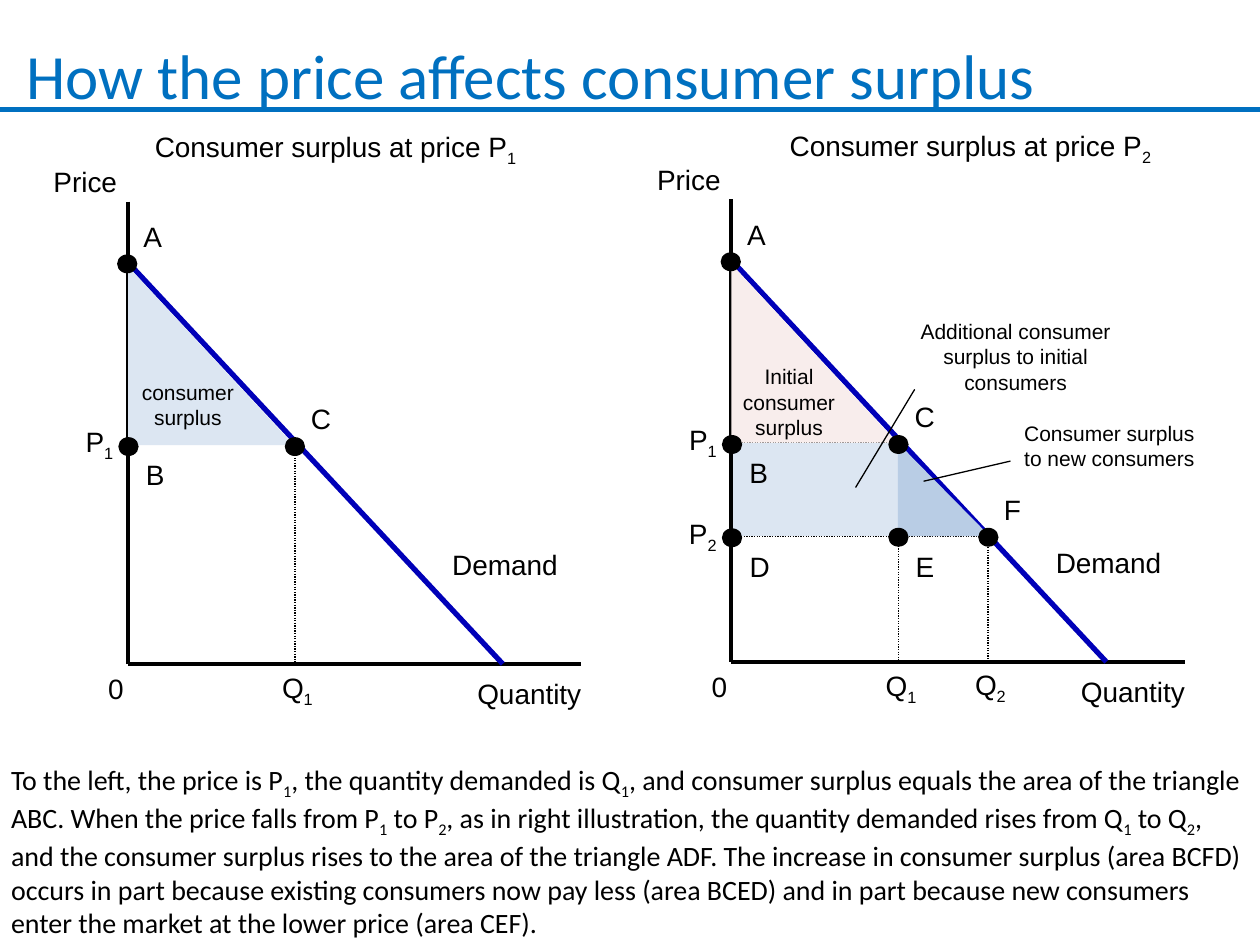
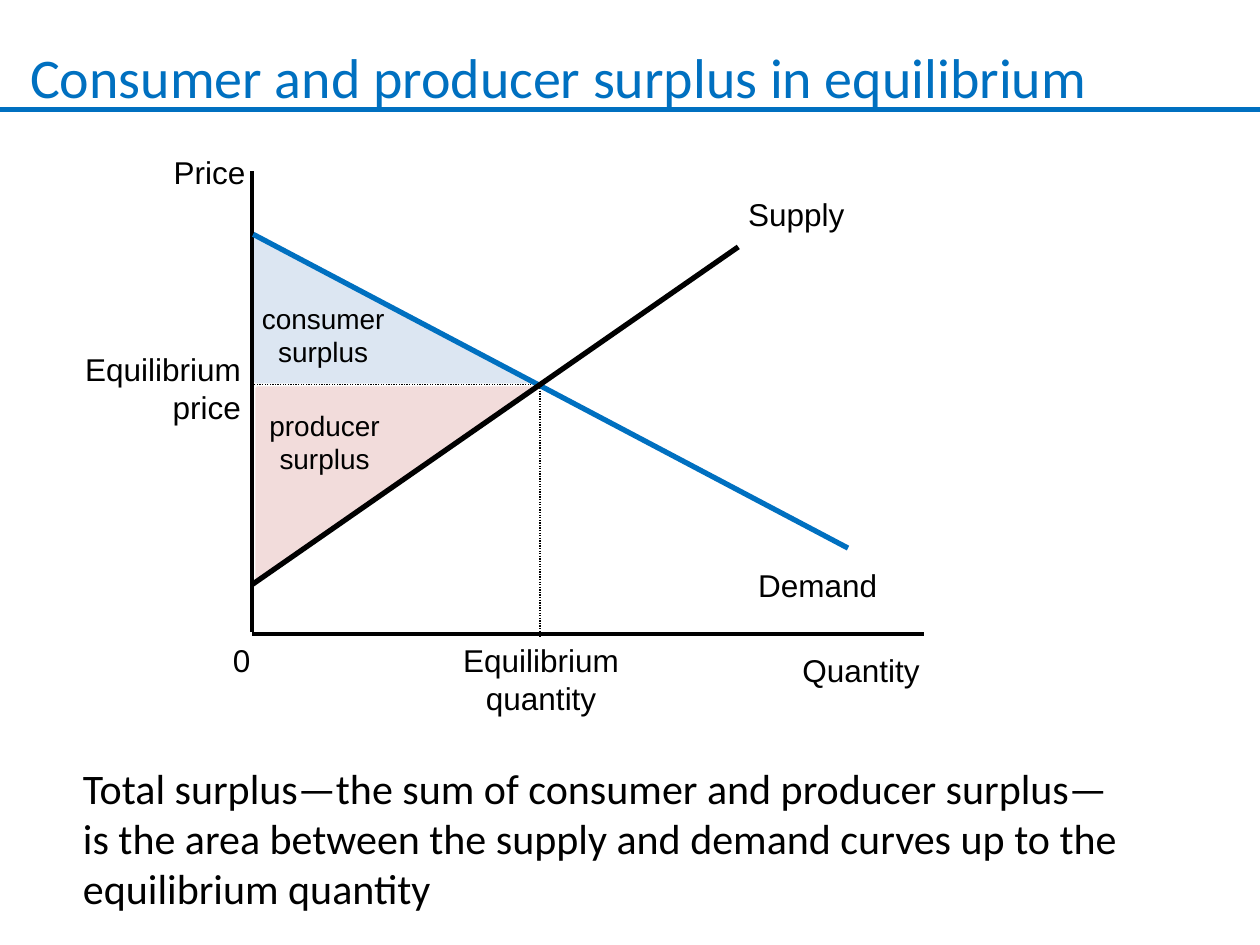
from lxml import etree
from pptx import Presentation
from pptx.dml.color import RGBColor
from pptx.enum import dml, shapes, text
from pptx.oxml.ns import qn
from pptx.util import Pt

HUES = {"blue": "0070C0", "navy": "0000B8", "black": "000000",
        "pale": "DCE6F2", "mid": "B9CDE5", "blush": "F8EDEC", "rose": "F2DCDB"}
# Line styles: colour, width, dotted
PENS = {"rule": ("blue", 3, False), "axis": ("black", 2.25, False),
        "navy": ("navy", 3, False), "blue": ("blue", 3, False),
        "black": ("black", 3, False), "dots": ("black", 0.75, True),
        "thin": ("black", 0.75, False)}
ALIGN = {"l": text.PP_ALIGN.LEFT, "c": text.PP_ALIGN.CENTER,
         "r": text.PP_ALIGN.RIGHT}
KINDS = {"tri": shapes.MSO_SHAPE.ISOSCELES_TRIANGLE,
         "rect": shapes.MSO_SHAPE.RECTANGLE, "dot": shapes.MSO_SHAPE.OVAL}

# Content: an underscore lowers the next character.
# Lines: pen, x1, y1, x2, y2. Areas: kind, colour, x, y, w, h, turn.
# Labels: text, x, y, w, format.
BASE = {  # the parts that both price charts have
    "lines": [("axis", 73, 115.2, 73, 379.4), ("axis", 73, 379.4, 332, 379.4),
              ("navy", 73, 149.8, 287.3, 379.4),
              ("dots", 73, 254.2, 169, 254.2),
              ("dots", 168.5, 255.6, 168.5, 378.7)],
    "dots": [(72.7, 150.8), (73.4, 255.2), (168.5, 255.2)],
    "labels": [("Price", 23, 90.7, 51, {"align": "r"}), ("0", 54.7, 380.2, 24, {}),
               ("Quantity", 265.7, 383, 75, {}), ("Demand", 251.3, 309.6, 76, {}),
               ("P_1", 41.8, 239, 31, {}), ("Q_1", 154.1, 379.4, 33, {}),
               ("A", 74.9, 121.7, 25, {}), ("B", 76.3, 257.8, 25, {}),
               ("C", 170.6, 226, 26, {})],
}
NOTE = {"size": 12, "align": "c"}
FIRST = {
    "areas": [("tri", "pale", 74.2, 154.8, 91.4, 98.6, 0)],
    "labels": [("Consumer surplus at price P_1", 81.4, 70.6, 258, {"wrap": True}),
               ("consumer\nsurplus", 73.4, 213.1, 68, NOTE)],
}
SECOND = {
    "lines": [("dots", 417.6, 306.7, 567.4, 306.7),
              ("dots", 564.5, 306.7, 564.5, 378)],
    "areas": [("tri", "blush", 419, 153.4, 91.4, 98.6, 0),
              ("rect", "pale", 419.8, 254.2, 92.2, 51.1, 0),
              ("tri", "mid", 514.1, 255.6, 49, 49.7, 0)],
    "dots": [(418.3, 307.3), (513.4, 307), (564.8, 307)],
    "labels": [("Consumer surplus at price P_2", 444.2, 69.8, 260, {"wrap": True}),
               ("Initial\nconsumer\nsurplus", 416.9, 204.5, 68, NOTE),
               ("P_2", 386.6, 291.6, 31, {}), ("Q_2", 550.1, 378, 33, {}),
               ("D", 421.2, 310.3, 26, {}), ("E", 516.2, 310.3, 25, {}),
               ("F", 566.6, 277.9, 25, {}),
               ("Additional consumer surplus to initial consumers",
                518.4, 178.6, 124, {**NOTE, "wrap": True}),
               ("Consumer surplus\nto new consumers", 578.2, 236.9, 124,
                {"size": 12, "wrap": True})],
}
CALLS = {"lines": [("thin", 488.9, 278.6, 522.7, 222.5),
                   ("thin", 527.8, 275, 577.4, 263.5)]}
# Axes lie under the areas, curves over them
UNDER = {
    "lines": [("axis", 144, 97.9, 144, 361.4), ("axis", 144, 362.4, 528, 362.4),
              ("dots", 308.5, 221.8, 308.5, 363.6)],
    "areas": [("tri", "pale", 146.2, 134.6, 158.4, 83.5, 0),
              ("tri", "rose", 146.9, 221.8, 157.7, 109.4, 180)],
}
BIG = {"size": 18}
OVER = {
    "lines": [("dots", 309.6, 219.6, 144, 219.6), ("blue", 144.7, 133.9, 484.6, 313.2),
              ("black", 144, 334.1, 421.9, 141.1)],
    "labels": [("Price", 91.4, 84.2, 56, {**BIG, "align": "r"}),
               ("0", 126, 362.9, 24.5, BIG), ("Quantity", 451.4, 368.6, 82, BIG),
               ("Equilibrium\nquantity", 257, 362.9, 104.4, {**BIG, "align": "c"}),
               ("Equilibrium\nprice", 40.3, 196.6, 104.4, {**BIG, "align": "r"}),
               ("Demand", 426.2, 319.7, 88.6, BIG), ("Supply", 420.5, 108, 75, BIG),
               ("consumer\nsurplus", 141.8, 168.5, 85.7, {"align": "c"}),
               ("producer\nsurplus", 146.2, 229.7, 78.5, {"align": "c"})],
}
SLIDES = [
    {"title": ("How the price affects consumer surplus", 7.9, 17.6, 36),
     "body": ("To the left, the price is P_1, the quantity demanded is Q_1, and "
              "consumer surplus equals the area of the triangle ABC. When the price "
              "falls from P_1 to P_2, as in right illustration, the quantity demanded "
              "rises from Q_1 to Q_2, and the consumer surplus rises to the area of "
              "the triangle ADF. The increase in consumer surplus (area BCFD) occurs "
              "in part because existing consumers now pay less (area BCED) and in "
              "part because new consumers enter the market at the lower price "
              "(area CEF).", -0.7, 720, 16),
     # Each layer: parts, shift right, shift down
     "layers": [(BASE, 0, 0, FIRST), (BASE, 344.9, -1.2, SECOND), (CALLS, 0, 0, {})]},
    {"title": ("Consumer and producer surplus in equilibrium", 10.1, 20.5, 32),
     "body": ("Total surplus—the sum of consumer and producer surplus—is the area "
              "between the supply and demand curves up to the equilibrium quantity",
              40.3, 613.4, 24),
     "layers": [(UNDER, 0, 0, {}), (OVER, 0, 0, {})]},
]


def rgb(hue):
    return RGBColor.from_string(HUES[hue])


def write(page, words, x, y, w, size=16, font="Arial", hue="black", align="l",
          wrap=False, grow=True):
    rows = words.split("\n")
    box = page.shapes.add_textbox(Pt(x), Pt(y), Pt(w),
                                  Pt(len(rows) * size * 1.2 + 7.2))
    frame = box.text_frame
    frame.word_wrap = wrap
    if grow:
        frame.auto_size = text.MSO_AUTO_SIZE.SHAPE_TO_FIT_TEXT
    for i, row in enumerate(rows):
        para = frame.add_paragraph() if i else frame.paragraphs[0]
        para.alignment = ALIGN[align]
        head, *rest = row.split("_")
        runs = [(head, False)]
        for bit in rest:
            runs += [(bit[0], True), (bit[1:], False)]
        for bit, low in runs:
            if not bit:
                continue
            run = para.add_run()
            run.text = bit
            run.font.size, run.font.name = Pt(size), font
            run.font.color.rgb = rgb(hue)
            if low:
                run.font._element.set("baseline", "-25000")


def draw(page, pen, x1, y1, x2, y2):
    hue, width, dotted = PENS[pen]
    line = page.shapes.add_connector(shapes.MSO_CONNECTOR.STRAIGHT,
                                     Pt(x1), Pt(y1), Pt(x2), Pt(y2))
    line.line.color.rgb = rgb(hue)
    line.line.width = Pt(width)
    if dotted:
        line.line.dash_style = dml.MSO_LINE.ROUND_DOT
    etree.SubElement(line._element.spPr, qn("a:effectLst"))


def fill(page, kind, hue, x, y, w, h, turn=0):
    area = page.shapes.add_shape(KINDS[kind], Pt(x), Pt(y), Pt(w), Pt(h))
    area.shadow.inherit = False
    area.fill.solid()
    area.fill.fore_color.rgb = rgb(hue)
    if kind == "dot":
        area.line.fill.background()
    else:
        area.line.color.rgb = rgb(hue)
        area.line.width = Pt(2)
    if kind == "tri":  # right angle at the price axis
        area.adjustments[0] = 1 if turn else 0
        area.rotation = turn


def plot(page, parts, dx=0, dy=0):
    for pen, x1, y1, x2, y2 in parts.get("lines", []):
        draw(page, pen, x1 + dx, y1 + dy, x2 + dx, y2 + dy)
    for area in parts.get("areas", []):
        fill(page, *area)
    for x, y in parts.get("dots", []):
        fill(page, "dot", "black", x + dx - 5.8, y + dy - 5.4, 11.6, 10.8)
    for words, x, y, w, look in parts.get("labels", []):
        write(page, words, x + dx, y + dy, w, **look)


def main():
    deck = Presentation()
    deck.slide_width, deck.slide_height = Pt(720), Pt(540)
    for item in SLIDES:
        page = deck.slides.add_slide(deck.slide_layouts[6])
        # Shared title and rule
        draw(page, "rule", 0, 62.6, 720, 62.6)
        words, x, y, size = item["title"]
        write(page, words, x, y, 703, size=size, font="Calibri", hue="blue",
              wrap=True, grow=False)
        # Chart: lines first, then areas, then dots and labels
        for parts, dx, dy, more in item["layers"]:
            plot(page, {"lines": parts.get("lines", [])}, dx, dy)
            plot(page, {k: more.get(k, []) for k in ("lines", "areas")})
            plot(page, {k: v for k, v in parts.items() if k != "lines"}, dx, dy)
            plot(page, {k: more.get(k, []) for k in ("dots", "labels")})
        # Text below the chart
        words, x, w, size = item["body"]
        write(page, words, x, 432, w, size=size, font="Calibri", wrap=True)
    deck.save("out.pptx")


if __name__ == "__main__":
    main()
